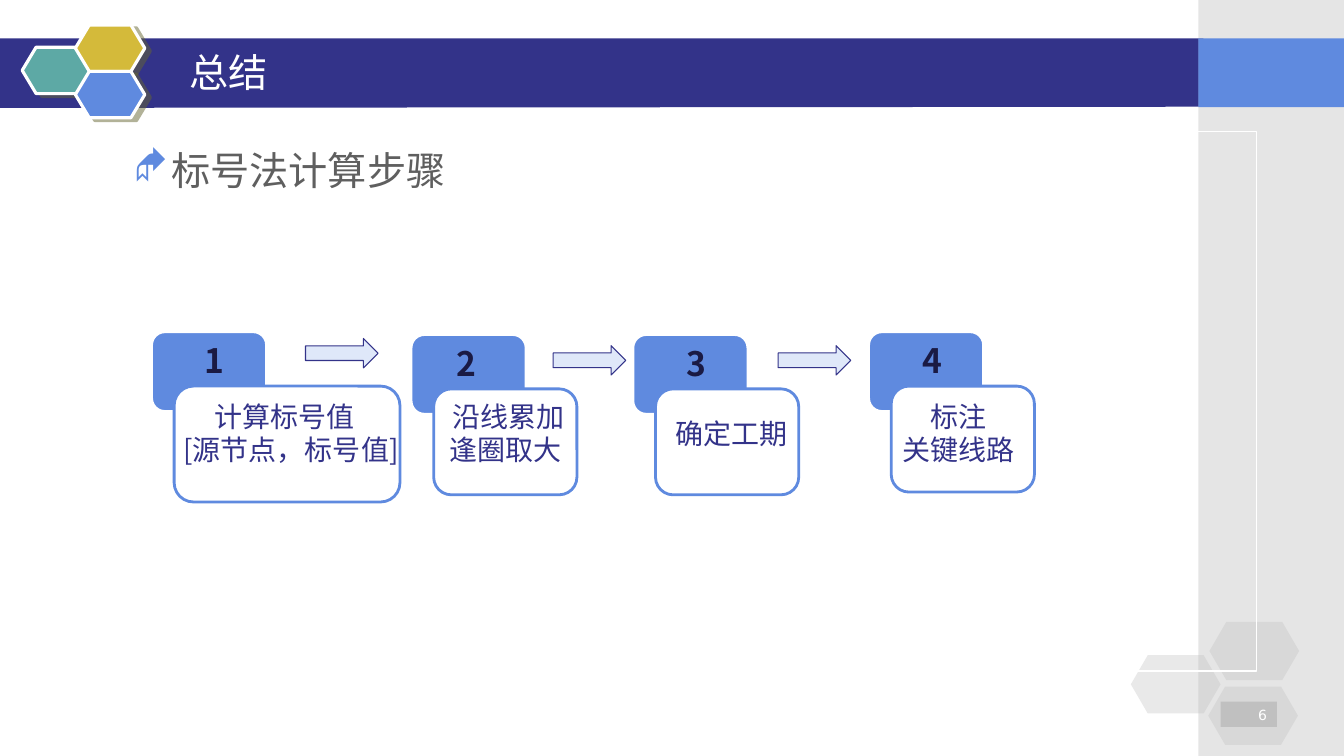
import pptx
import pptx.util
from lxml import etree
from pptx.dml.color import RGBColor
from pptx.enum.shapes import MSO_SHAPE
from pptx.enum.text import MSO_ANCHOR, PP_ALIGN
from pptx.oxml.ns import qn
from pptx.util import Cm, Pt

NAVY = RGBColor(0x33, 0x33, 0x89)
DARK = RGBColor(0x1A, 0x1A, 0x44)
BLUE = RGBColor(0x5F, 0x8A, 0xDF)
PALE_BLUE = RGBColor(0xDF, 0xE8, 0xF9)
TEAL = RGBColor(0x5D, 0xA9, 0xA5)
GOLD = RGBColor(0xD4, 0xBA, 0x3A)
SILVER = RGBColor(0xC0, 0xC0, 0xC0)
GREY = RGBColor(0x5F, 0x5F, 0x5F)
OLIVE = RGBColor(0x66, 0x66, 0x33)
WHITE = RGBColor(0xFF, 0xFF, 0xFF)


class SlideBuilder:
    font = "Noto Sans CJK SC"

    def __init__(self, page):
        self.page = page

    def paint(self, shape, fill, line=None, weight=0.75, alpha=None):
        shape.shadow.inherit = False
        if fill is None:
            shape.fill.background()
        else:
            shape.fill.solid()
            shape.fill.fore_color.rgb = fill
        if alpha is not None:
            color = shape.element.spPr.find(".//" + qn("a:srgbClr"))
            etree.SubElement(color, qn("a:alpha"), val=str(alpha * 1000))
        if line is None:
            shape.line.fill.background()
        else:
            shape.line.color.rgb = line
            shape.line.width = Pt(weight)

    def shape(self, kind, left, top, width, height, fill, **style):
        shape = self.page.shapes.add_shape(kind, Cm(left), Cm(top), Cm(width), Cm(height))
        self.paint(shape, fill, **style)
        return shape

    def hexagon(self, left, top, width, height, adjustment, fill, **style):
        hexagon = self.shape(MSO_SHAPE.HEXAGON, left, top, width, height, fill, **style)
        hexagon.adjustments[0] = adjustment
        return hexagon

    def cast_shadow(self, shape):
        effects = shape.element.spPr.find(qn("a:effectLst"))
        shadow = etree.SubElement(effects, qn("a:outerShdw"), blurRad="0", dist=str(Pt(4.5)),
                                  dir="1620000", algn="ctr", rotWithShape="0")
        color = etree.SubElement(shadow, qn("a:srgbClr"), val=str(OLIVE))
        etree.SubElement(color, qn("a:alpha"), val="50000")

    def band(self, corners, fill):
        points = [(Cm(x), Cm(y)) for x, y in corners]
        builder = self.page.shapes.build_freeform(*points[0])
        builder.add_line_segments(points[1:], close=True)
        self.paint(builder.convert_to_shape(), fill)

    def set_text(self, shape, lines, size, color, align=PP_ALIGN.LEFT, anchor=MSO_ANCHOR.TOP,
                 bold=False, font=font):
        frame = shape.text_frame
        frame.word_wrap = True
        frame.vertical_anchor = anchor
        frame.text = "\n".join(lines)
        for para in frame.paragraphs:
            para.alignment = align
            para.font.name = font
            para.font.size = Pt(size)
            para.font.bold = bold
            para.font.color.rgb = color
            defaults = para._p.pPr.find(qn("a:defRPr"))
            defaults.find(qn("a:latin")).addnext(etree.Element(qn("a:ea"), typeface=font))
        return frame

    def text(self, left, top, width, height, lines, size, color, **style):
        box = self.page.shapes.add_textbox(Cm(left), Cm(top), Cm(width), Cm(height))
        self.set_text(box, lines, size, color, **style)

    def title(self, left, top, width, height, wording):
        title = self.page.shapes.title
        title.left, title.top, title.width, title.height = map(Cm, (left, top, width, height))
        self.set_text(title, [wording], 28, WHITE, anchor=MSO_ANCHOR.MIDDLE)
        title.element.getparent().append(title.element)

    def bullet(self, para, symbol, color, hanging):
        properties = para._p.get_or_add_pPr()
        properties.set("marL", str(Cm(hanging)))
        properties.set("indent", str(-Cm(hanging)))
        defaults = properties.find(qn("a:defRPr"))
        tint = etree.Element(qn("a:buClr"))
        etree.SubElement(tint, qn("a:srgbClr"), val=str(color))
        for element in (tint,
                        etree.Element(qn("a:buFont"), typeface="Wingdings"),
                        etree.Element(qn("a:buChar"), char=symbol)):
            defaults.addprevious(element)

    def step(self, number, left, top, number_left, card_width, card_height, caption_place, lines):
        rounded = MSO_SHAPE.ROUNDED_RECTANGLE
        self.shape(rounded, left, top, 2.9, 2.01, BLUE, line=WHITE, weight=2)
        self.shape(rounded, left + 0.57, top + 1.37, card_width, card_height, WHITE,
                   line=BLUE, weight=2)
        self.text(number_left, top + 0.08, 1.42, 1.27, [str(number)], 24, DARK, bold=True)
        self.text(*caption_place, lines, 20, NAVY, align=PP_ALIGN.CENTER)


def main():
    deck = pptx.Presentation()
    deck.slide_width, deck.slide_height = Cm(33.87), Cm(19.05)
    page = deck.slides.add_slide(deck.slide_layouts.get_by_name("Title Only"))
    slide = SlideBuilder(page)

    slide.band([(-0.03, 0.97), (30.33, 0.97), (30.3, 2.69), (-0.03, 2.72)], NAVY)
    slide.shape(MSO_SHAPE.RECTANGLE, 30.2, 0, 3.67, 19.05, SILVER, alpha=40)
    slide.shape(MSO_SHAPE.RECTANGLE, 30.2, 0.97, 3.67, 1.73, BLUE)
    for left, top, fill in ((0.56, 1.19, TEAL), (1.9, 0.63, GOLD), (1.9, 1.8, BLUE)):
        slide.cast_shadow(slide.hexagon(left, top, 1.75, 1.17, 0.3, fill, line=WHITE, weight=2.25))
    for left, top in ((28.5, 16.51), (30.48, 15.67), (30.45, 17.3)):
        slide.hexagon(left, top, 2.26, 1.47, 0.29, SILVER, alpha=35)

    body = slide.shape(MSO_SHAPE.RECTANGLE, 3.12, 3.32, 28.55, 13.59, None, line=WHITE)
    heading = slide.set_text(body, ["标号法计算步骤"], 28, GREY).paragraphs[0]
    heading.line_spacing = 1.2
    heading.space_before = Pt(5.6)
    slide.bullet(heading, "◆", BLUE, 0.95)

    page_number = slide.shape(MSO_SHAPE.RECTANGLE, 30.76, 17.68, 1.42, 0.64, SILVER)
    slide.set_text(page_number, ["6"], 10, WHITE, align=PP_ALIGN.RIGHT, font="DejaVu Sans")

    steps = (
        (3.82, 8.36, 4.9, 5.69, 2.92, (4.17, 9.93, 6.17, 2.74),
         ["计算标号值 ", " [源节点，标号值]"]),
        (10.36, 8.43, 11.25, 3.61, 2.67, (10.92, 9.93, 3.81, 1.96), ["沿线累加", "逢圈取大 "]),
        (15.95, 8.43, 17.04, 3.61, 2.67, (16.54, 10.36, 3.81, 1.02), ["确定工期"]),
        (21.89, 8.36, 22.99, 3.61, 2.67, (22.25, 9.93, 3.81, 2.74), ["标注", "关键线路"]),
    )
    for number, details in enumerate(steps, start=1):
        slide.step(number, *details)
    for left, top in ((7.7, 8.53), (13.94, 8.71), (19.61, 8.71)):
        slide.shape(MSO_SHAPE.RIGHT_ARROW, left, top, 1.83, 0.74, PALE_BLUE, line=NAVY)

    slide.title(4.52, 1.07, 24.56, 1.47, "总结")
    deck.save("out.pptx")


if __name__ == "__main__":
    main()
